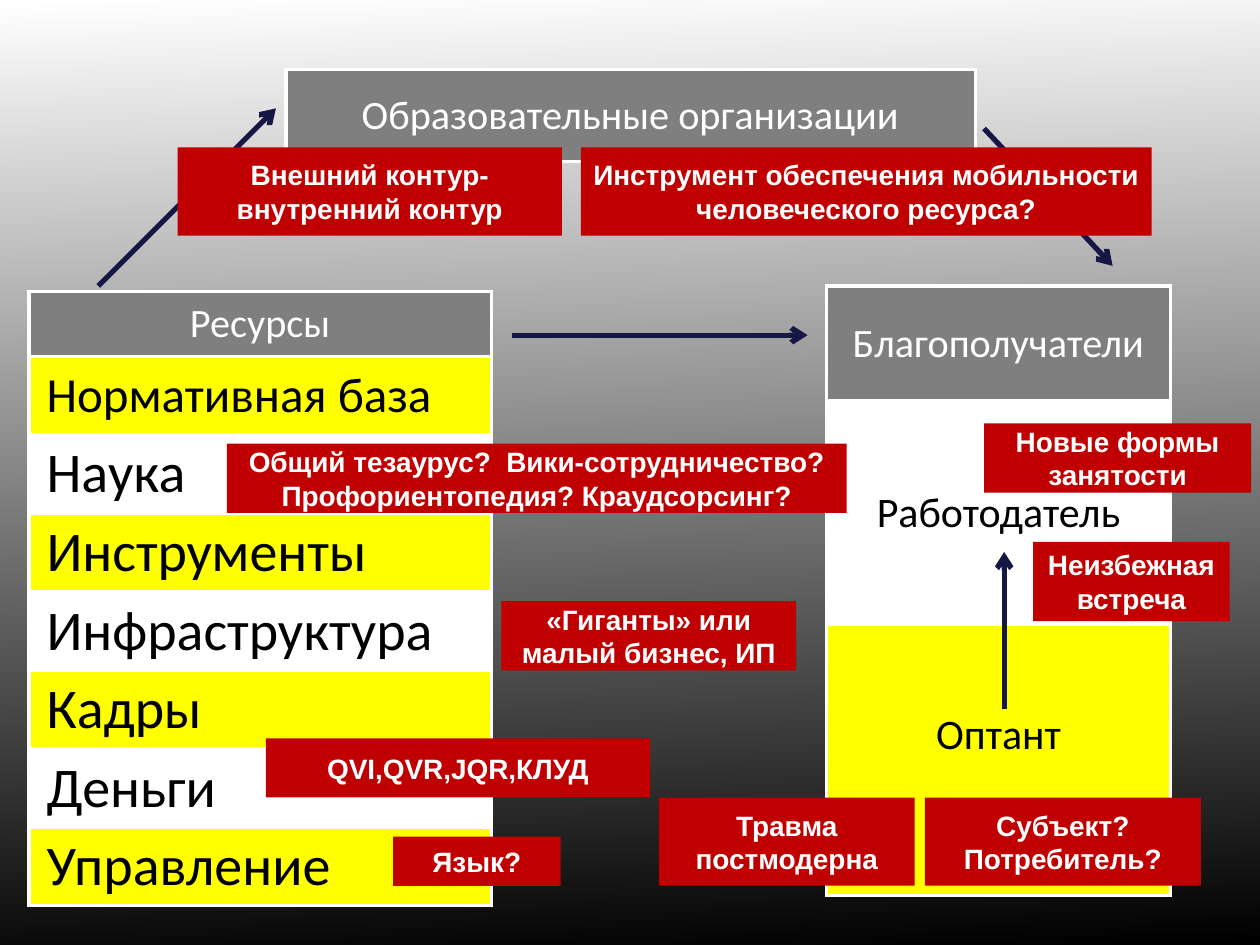
from lxml import etree
from pptx import Presentation
from pptx import util as u
from pptx.dml import color
from pptx.enum import shapes, text
from pptx.oxml import ns

WHITE, BLACK, GREY, YELLOW = "FFFFFF", "000000", "7F7F7F", "FFFF00"
RED, NAVY = "C00000", "171745"


def rgb(hex_code):
    return color.RGBColor.from_string(hex_code)


class SlideBuilder:
    table_font = "Calibri"
    note_font = "Arial"
    note_size = 16
    cell_inset = 0.04
    border_width = 2
    arrow_width = 3

    def __init__(self, slide):
        self.slide = slide

    def background(self, top, bottom):
        fill = self.slide.background.fill
        fill.gradient()
        fill.gradient_angle = 272
        for stop, shade in zip(fill.gradient_stops, (top, bottom)):
            stop.color.rgb = rgb(shade)

    def style_text(self, frame, font, size, shade, bold=False, align=text.PP_ALIGN.CENTER):
        for paragraph in frame.paragraphs:
            paragraph.alignment = align
            for run in paragraph.runs:
                run.font.name = font
                run.font.size = u.Pt(size)
                run.font.bold = bold
                run.font.color.rgb = rgb(shade)

    def border(self, cell):
        properties = cell._tc.get_or_add_tcPr()
        for index, side in enumerate(("lnL", "lnR", "lnT", "lnB")):
            line = etree.Element(ns.qn(f"a:{side}"), w=str(u.Pt(self.border_width)))
            fill = etree.SubElement(line, ns.qn("a:solidFill"))
            etree.SubElement(fill, ns.qn("a:srgbClr"), val=WHITE)
            properties.insert(index, line)

    def table(self, left, top, width, rows, align=text.PP_ALIGN.CENTER, indent=0):
        """Draw one column of (label, height, size, fill) rows under a grey first row."""
        height = sum(row[1] for row in rows)
        grid = self.slide.shapes.add_table(
            len(rows), 1, u.Inches(left), u.Inches(top), u.Inches(width), u.Inches(height)
        ).table
        for index, (label, row_height, size, fill) in enumerate(rows):
            heading = index == 0
            grid.rows[index].height = u.Inches(row_height)
            cell = grid.cell(index, 0)
            cell.margin_left = u.Inches(self.cell_inset + (0 if heading else indent))
            cell.margin_right = cell.margin_top = cell.margin_bottom = u.Inches(self.cell_inset)
            cell.vertical_anchor = text.MSO_ANCHOR.MIDDLE
            cell.fill.solid()
            cell.fill.fore_color.rgb = rgb(fill)
            self.border(cell)
            cell.text_frame.text = label
            self.style_text(
                cell.text_frame, self.table_font, size,
                WHITE if heading else BLACK,
                align=text.PP_ALIGN.CENTER if heading else align,
            )
        return grid

    def arrow(self, x1, y1, x2, y2):
        connector = self.slide.shapes.add_connector(
            shapes.MSO_CONNECTOR.STRAIGHT,
            u.Inches(x1), u.Inches(y1), u.Inches(x2), u.Inches(y2),
        )
        connector.line.color.rgb = rgb(NAVY)
        connector.line.width = u.Pt(self.arrow_width)
        etree.SubElement(connector.line._get_or_add_ln(), ns.qn("a:tailEnd"), type="arrow")
        etree.SubElement(connector._element.spPr, ns.qn("a:effectLst"))

    def note(self, left, top, width, height, label):
        box = self.slide.shapes.add_shape(
            shapes.MSO_SHAPE.RECTANGLE,
            u.Inches(left), u.Inches(top), u.Inches(width), u.Inches(height),
        )
        box.shadow.inherit = False
        box.fill.solid()
        box.fill.fore_color.rgb = rgb(RED)
        box.line.fill.background()
        frame = box.text_frame
        frame.word_wrap = True
        frame.vertical_anchor = text.MSO_ANCHOR.MIDDLE
        frame.text = label
        self.style_text(frame, self.note_font, self.note_size, WHITE, bold=True)


def main():
    deck = Presentation()
    deck.slide_width, deck.slide_height = u.Inches(10), u.Inches(7.5)
    page = SlideBuilder(deck.slides.add_slide(deck.slide_layouts[6]))
    page.background(WHITE, BLACK)

    resources = ["Нормативная база", "Наука", "Инструменты", "Инфраструктура",
                 "Кадры", "Деньги", "Управление"]
    resource_rows = [("Ресурсы", 0.52, 23, GREY)]
    for index, resource in enumerate(resources):
        size = 28 if index == 0 else 32
        resource_rows.append((resource, 0.62, size, WHITE if index % 2 else YELLOW))
    page.table(0.23, 2.31, 3.67, resource_rows, text.PP_ALIGN.LEFT, indent=0.1)

    beneficiaries = page.table(6.56, 2.27, 2.73, [
        ("Благополучатели", 0.91, 23, GREY),
        ("Работодатель", 1.78, 24, WHITE),
        ("Оптант", 2.15, 24, YELLOW),
    ])
    # Keeps the last label clear of the notes below it
    beneficiaries.cell(2, 0).margin_bottom = u.Inches(0.44)
    page.table(2.27, 0.55, 5.47, [("Образовательные организации", 0.73, 23, GREY)])

    for ends in [
        (7.81, 1.02, 8.83, 2.11),
        (0.78, 2.27, 2.19, 0.86),
        (4.06, 2.66, 6.41, 2.66),
        (7.97, 5.63, 7.97, 4.38),
    ]:
        page.arrow(*ends)

    for note in [
        (1.8, 3.52, 4.92, 0.55,
         "Общий тезаурус?  Вики-сотрудничество? Профориентопедия? Краудсорсинг?"),
        (4.61, 1.17, 4.53, 0.7, "Инструмент обеспечения мобильности человеческого ресурса?"),
        (7.34, 6.33, 2.19, 0.7, "Субъект?\nПотребитель?"),
        (8.2, 4.3, 1.56, 0.63, "Неизбежная встреча"),
        (5.23, 6.33, 2.03, 0.7, "Травма постмодерна"),
        (7.81, 3.36, 2.12, 0.55, "Новые формы занятости"),
        (1.41, 1.17, 3.05, 0.7, "Внешний контур-внутренний контур"),
        (3.12, 6.64, 1.33, 0.39, "Язык?"),
        (2.11, 5.86, 3.05, 0.47, "QVI,QVR,JQR,КЛУД"),
        (3.98, 4.77, 2.34, 0.55, "«Гиганты» или малый бизнес, ИП"),
    ]:
        page.note(*note)

    deck.save("out.pptx")


if __name__ == "__main__":
    main()
